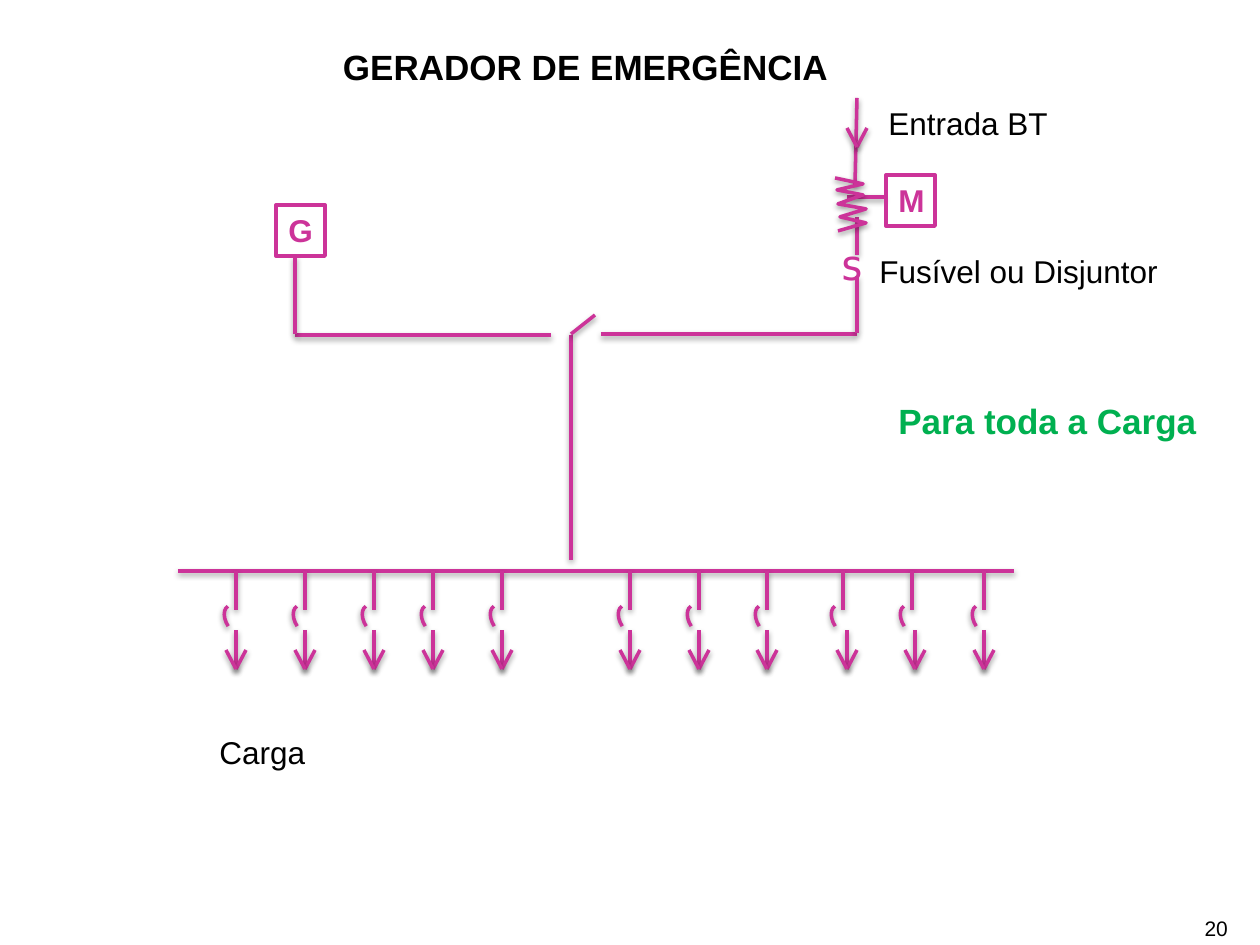
from dataclasses import dataclass

from lxml.etree import SubElement
from pptx import Presentation
from pptx.dml.color import RGBColor
from pptx.enum.shapes import MSO_CONNECTOR, MSO_SHAPE
from pptx.enum.text import MSO_ANCHOR, MSO_AUTO_SIZE, PP_ALIGN
from pptx.oxml.ns import qn
from pptx.util import Emu, Pt


@dataclass(frozen=True)
class Theme:
    font: str = "Arial"
    mono: str = "DejaVu Sans Mono"
    black: RGBColor = RGBColor(0, 0, 0)
    magenta: RGBColor = RGBColor(0xCC, 0x33, 0x99)
    green: RGBColor = RGBColor(0x00, 0xB0, 0x50)
    number: Pt = Pt(12)
    body: Pt = Pt(18)
    heading: Pt = Pt(20)
    symbol: Pt = Pt(24)
    wire: Pt = Pt(2)
    frame: Pt = Pt(2.25)


T = Theme()
PX = 914400 / 126


def place(*lengths):
    return [Emu(round(n * PX)) for n in lengths]


def write(sp, text, size, color, bold=False, font=T.font, align=PP_ALIGN.LEFT):
    tf = sp.text_frame
    tf.text = text
    tf.word_wrap = True
    tf.auto_size = MSO_AUTO_SIZE.NONE
    tf.vertical_anchor = MSO_ANCHOR.TOP
    p = tf.paragraphs[0]
    p.alignment = align
    r = p.runs[0]
    r.font.name = font
    r.font.size = size
    r.font.bold = bold
    r.font.color.rgb = color


prs = Presentation()
prs.slide_width, prs.slide_height = place(1260, 945)
s = prs.slides.add_slide(prs.slide_layouts[5])

title = s.shapes.title
title.left, title.top, title.width, title.height = place(29, 39, 1113, 55)
write(title, "GERADOR DE EMERGÊNCIA", T.heading, T.black, True, align=PP_ALIGN.CENTER)

wires = [
    (295, 335, 551, 335),
    (601, 334, 857, 334),
    (571, 335, 571, 560),
    (178, 571, 1014, 571),
    (571, 334, 595, 315),
    (857, 276, 857, 333),
    (857, 217, 857, 255),
    (857, 98, 855, 185),
    (295, 256, 295, 334),
    (885, 197, 847, 197),
]
arrow_tips = [(857, 147)]
strokes = []

stubs = [236, 305, 374, 433, 502, 630, 699, 767, 843, 912, 984]
loads = [236, 305, 374, 433, 502, 630, 699, 767, 847, 915, 984]
for stub, load in zip(stubs, loads):
    wires += [(stub, 571, stub, 610), (load, 630, load, 669)]
    arrow_tips.append((load, 669))
    arc = s.shapes.add_shape(MSO_SHAPE.ARC, *place(stub - 16, 610, 34, 21))
    arc.rotation = 237.2
    arc.fill.background()
    strokes.append(arc)

for wire in wires:
    strokes.append(s.shapes.add_connector(MSO_CONNECTOR.STRAIGHT, *place(*wire)))

for x, y in arrow_tips:
    head = s.shapes.add_group_shape()
    for side in (10, -10):
        barb = place(x + side, y - 19, x, y)
        strokes.append(head.shapes.add_connector(MSO_CONNECTOR.STRAIGHT, *barb))

coil = [(835, 178), (863, 184), (837, 190), (863, 195), (838, 204),
        (866, 209), (840, 217), (866, 223), (838, 231)]
fb = s.shapes.build_freeform(*coil[0], scale=PX)
fb.add_line_segments(coil[1:], close=False)
zigzag = fb.convert_to_shape()
zigzag.fill.background()
strokes.append(zigzag)

for sp in strokes:
    sp.line.color.rgb = T.magenta
    sp.line.width = T.wire
    effects = SubElement(sp._element.spPr, qn("a:effectLst"))
    shadow = SubElement(effects, qn("a:outerShdw"), blurRad="40000", dist="20000",
                        dir="5400000", rotWithShape="0")
    black = SubElement(shadow, qn("a:srgbClr"), val=str(T.black))
    SubElement(black, qn("a:alpha"), val="38000")

for text, x, y in [("G", 276, 205), ("M", 886, 175)]:
    box = s.shapes.add_shape(MSO_SHAPE.RECTANGLE, *place(x, y, 49, 51))
    box.shadow.inherit = False
    box.fill.background()
    box.line.color.rgb = T.magenta
    box.line.width = T.frame
    write(box, text, T.body, T.magenta, True)

labels = [
    ("Fusível ou Disjuntor", 867, 246, 325, 50, T.body, T.black, False, T.font),
    ("Entrada BT", 876, 98, 325, 50, T.body, T.black, False, T.font),
    ("Carga", 207, 727, 325, 50, T.body, T.black, False, T.font),
    ("Para toda a Carga", 886, 393, 325, 55, T.heading, T.green, True, T.font),
    ("s", 827, 232, 39, 63, T.symbol, T.magenta, False, T.mono),
]
for text, x, y, w, h, size, color, bold, font in labels:
    tb = s.shapes.add_textbox(*place(x, y, w, h))
    write(tb, text, size, color, bold, font)

number = s.shapes.add_textbox(*place(966, 916, 262, 25))
write(number, "20", T.number, T.black, align=PP_ALIGN.RIGHT)
tf = number.text_frame
tf.margin_left = tf.margin_top = tf.margin_right = tf.margin_bottom = 0

prs.save("out.pptx")
